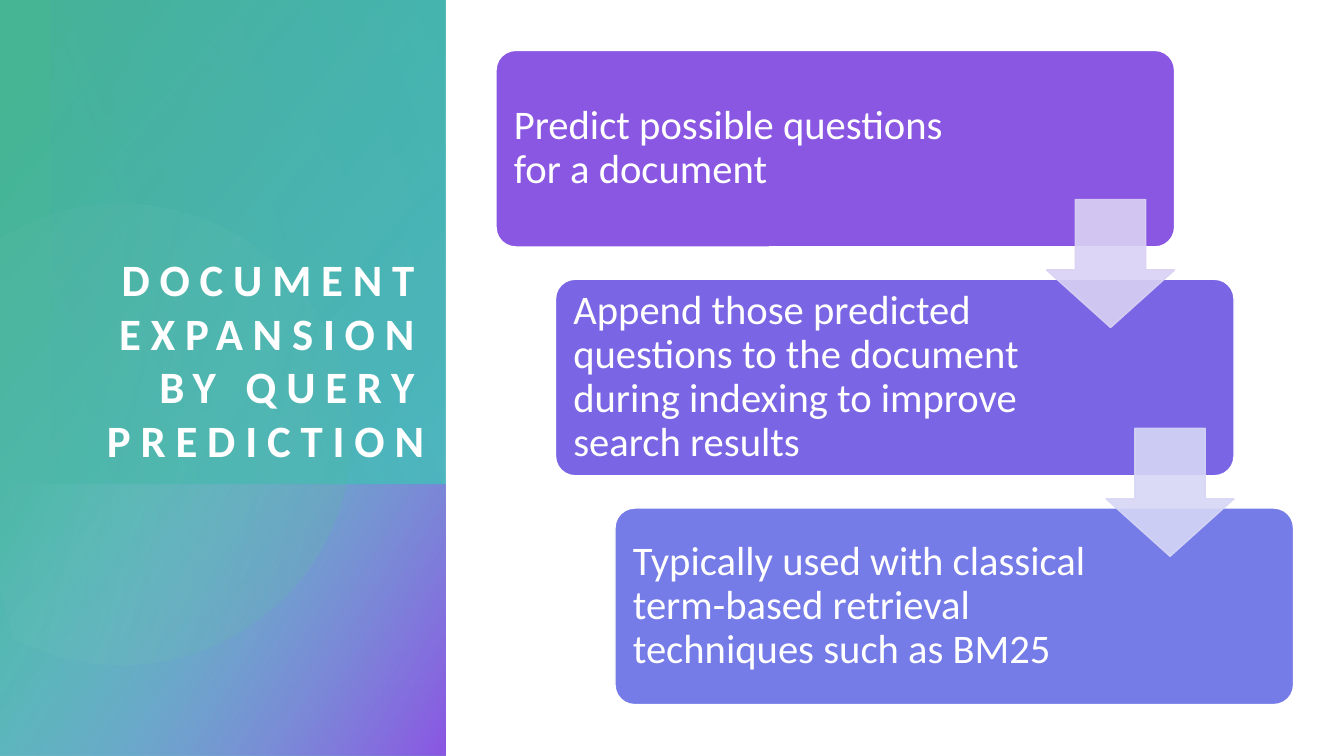
from lxml.etree import SubElement
from pptx import Presentation
from pptx.dml.color import RGBColor
from pptx.enum.shapes import MSO_SHAPE
from pptx.enum.text import MSO_ANCHOR, PP_ALIGN
from pptx.oxml.ns import qn
from pptx.util import Inches, Pt

WHITE = RGBColor(0xFF, 0xFF, 0xFF)
GREEN = RGBColor(0x46, 0xB5, 0x94)
MINT = RGBColor(0x8F, 0xD4, 0xBF)
TEAL = RGBColor(0x3F, 0xB2, 0xC2)
PALE_TEAL = RGBColor(0x8C, 0xD1, 0xDA)
BLUE = RGBColor(0x57, 0x97, 0xE2)
PURPLE = RGBColor(0x8A, 0x57, 0xE2)
VIOLET = RGBColor(0x7A, 0x66, 0xE4)
PERIWINKLE = RGBColor(0x75, 0x7B, 0xE7)
LILAC = RGBColor(0xDA, 0xD1, 0xF4)
LAVENDER = RGBColor(0xD6, 0xD7, 0xF6)


def set_alpha(shape, *percents):
    for color, percent in zip(shape._element.spPr.iter(qn("a:srgbClr")), percents):
        SubElement(color, qn("a:alpha")).set("val", str(percent * 1000))


def paint_gradient(shape, angle, start, end):
    shape.shadow.inherit = False
    shape.line.fill.background()
    shape.fill.gradient()
    shape.fill.gradient_angle = angle
    for stop, (position, color, _) in zip(shape.fill.gradient_stops, (start, end)):
        stop.position = position
        stop.color.rgb = color
    set_alpha(shape, start[2], end[2])


prs = Presentation()
prs.slide_width = Inches(13.33)
prs.slide_height = Inches(7.5)
slide = prs.slides.add_slide(prs.slide_layouts[6])
shapes = slide.shapes

panel = shapes.add_shape(MSO_SHAPE.RECTANGLE, 0, 0, Inches(4.42), Inches(7.5))
paint_gradient(panel, 320, (0.08, GREEN, 100), (1, TEAL, 89))

panel_foot = shapes.add_shape(
    MSO_SHAPE.RECTANGLE, 0, Inches(4.81), Inches(4.42), Inches(2.69))
paint_gradient(panel_foot, 330, (0, PALE_TEAL, 0), (0.99, PURPLE, 100))

DISC_LEFT, DISC_TOP = -0.4, 1.92
disc_start = (1.64, 1.96)
disc_curves = [
    [(2.61, 1.98), (3.5, 2.63), (3.78, 3.62)],
    [(4.13, 4.83), (3.43, 6.1), (2.22, 6.44)],
    [(1.46, 6.66), (0.68, 6.47), (0.12, 6)],
    [(0, 5.89), (0, 5.89), (0, 5.89)],
    [(0, 2.61), (0, 2.61), (0, 2.61)],
    [(0.15, 2.47), (0.15, 2.47), (0.15, 2.47)],
    [(0.38, 2.29), (0.65, 2.14), (0.95, 2.05)],
    [(1.18, 1.99), (1.41, 1.96), (1.64, 1.96)],
]
STEPS = 16
outline = []
corner = disc_start
for curve in disc_curves:
    for step in range(1, STEPS + 1):
        t = step / STEPS
        weights = ((1 - t) ** 3, 3 * t * (1 - t) ** 2, 3 * t * t * (1 - t), t ** 3)
        x, y = (sum(w * point[axis] for w, point in zip(weights, [corner, *curve]))
                for axis in (0, 1))
        outline.append((Inches(x), Inches(y)))
    corner = curve[-1]
disc_builder = shapes.build_freeform(Inches(disc_start[0]), Inches(disc_start[1]))
disc_builder.add_line_segments(outline, close=True)
disc = disc_builder.convert_to_shape()
disc.left, disc.top = Inches(DISC_LEFT), Inches(DISC_TOP)
disc.rotation = 343.9
paint_gradient(disc, 330, (0.36, MINT, 6), (1, GREEN, 26))

panel_tint = shapes.add_shape(
    MSO_SHAPE.RECTANGLE, Inches(0.5), 0, Inches(3.92), Inches(4.81))
paint_gradient(panel_tint, 200, (0, TEAL, 29), (1, BLUE, 0))

title = shapes.add_textbox(Inches(0.5), Inches(0.95), Inches(3.71), Inches(3.68))
title_frame = title.text_frame
title_frame.word_wrap = True
title_frame.vertical_anchor = MSO_ANCHOR.BOTTOM
title_frame.margin_left = title_frame.margin_right = 0
title_frame.margin_top = title_frame.margin_bottom = 0
title_frame.text = "DOCUMENT EXPANSION BY QUERY PREDICTION"
title_frame.paragraphs[0].alignment = PP_ALIGN.RIGHT
title_run = title_frame.paragraphs[0].runs[0]
title_run.font.name = "Calibri"
title_run.font.size = Pt(32)
title_run.font.bold = True
title_run.font.color.rgb = WHITE
title_run._r.get_or_add_rPr().set("spc", "700")

STEP_X, STEP_Y = 0.59, 2.27
stages = [
    ("Predict possible questions for a document", PURPLE),
    ("Append those predicted questions to the document during indexing "
     "to improve search results", VIOLET),
    ("Typically used with classical term-based retrieval techniques such as BM25",
     PERIWINKLE),
]
for index, (wording, color) in enumerate(stages):
    stage = shapes.add_shape(
        MSO_SHAPE.ROUNDED_RECTANGLE,
        Inches(4.92 + index * STEP_X), Inches(0.5 + index * STEP_Y),
        Inches(6.73), Inches(1.95))
    stage.adjustments[0] = 0.1
    stage.shadow.inherit = False
    stage.fill.solid()
    stage.fill.fore_color.rgb = color
    stage.line.color.rgb = WHITE
    stage.line.width = Pt(1)
    frame = stage.text_frame
    frame.word_wrap = True
    frame.vertical_anchor = MSO_ANCHOR.MIDDLE
    frame.margin_left = Inches(0.12)
    frame.margin_right = Inches(1.98)
    frame.margin_top = frame.margin_bottom = Inches(0.12)
    frame.text = wording
    paragraph = frame.paragraphs[0]
    paragraph.alignment = PP_ALIGN.LEFT
    paragraph.line_spacing = 0.9
    font = paragraph.runs[0].font
    font.name = "Calibri"
    font.size = Pt(29)
    font.color.rgb = WHITE

for index, color in enumerate((LILAC, LAVENDER)):
    arrow = shapes.add_shape(
        MSO_SHAPE.DOWN_ARROW,
        Inches(10.38 + index * STEP_X), Inches(1.98 + index * STEP_Y),
        Inches(1.27), Inches(1.27))
    arrow.adjustments[0] = 0.55
    arrow.adjustments[1] = 0.45
    arrow.shadow.inherit = False
    arrow.fill.solid()
    arrow.fill.fore_color.rgb = color
    arrow.line.color.rgb = color
    arrow.line.width = Pt(1)
    set_alpha(arrow, 90, 90)

prs.save("out.pptx")
